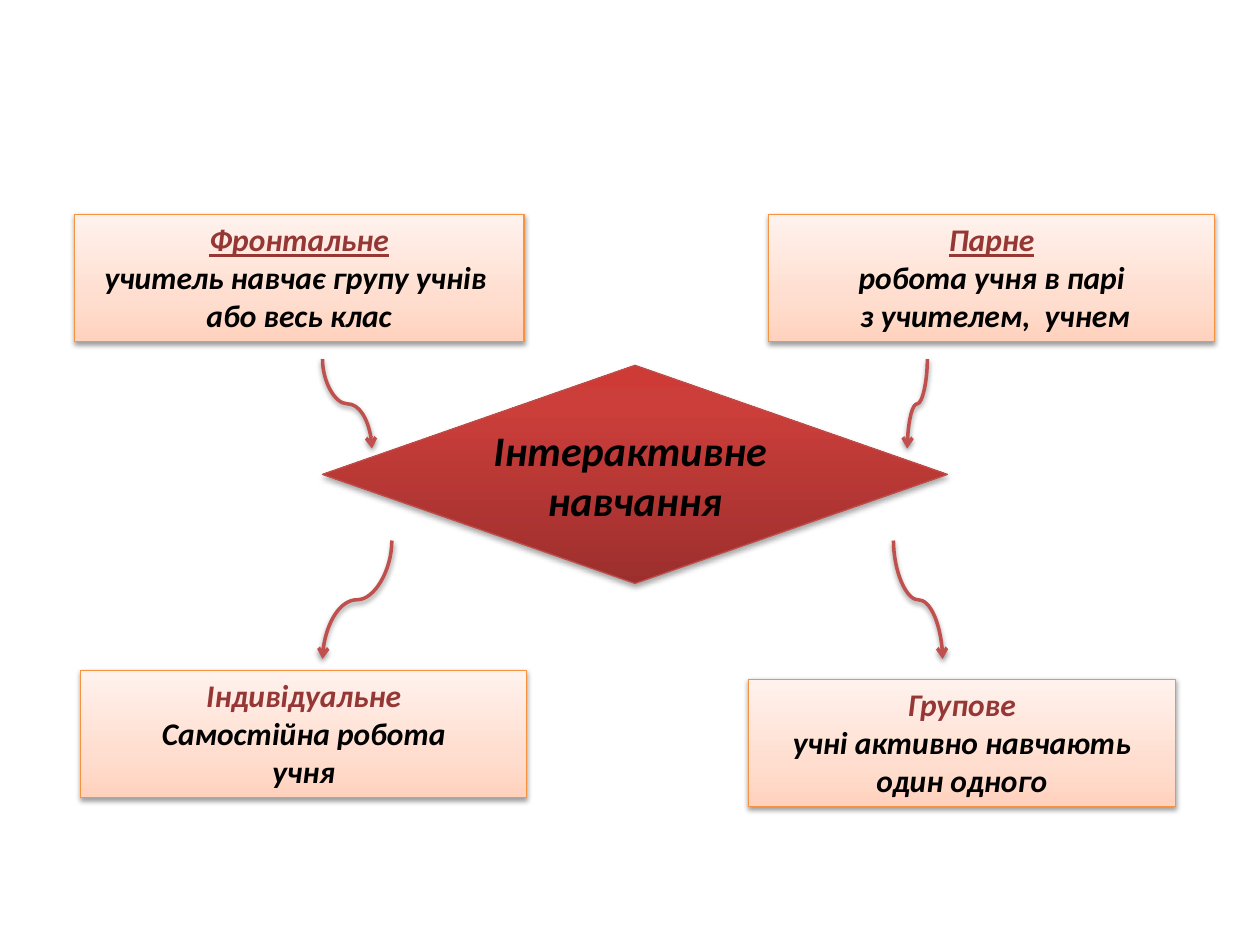
from lxml import etree
from pptx import Presentation
from pptx.dml.color import RGBColor
from pptx.enum.shapes import MSO_CONNECTOR, MSO_SHAPE
from pptx.enum.text import MSO_ANCHOR, MSO_AUTO_SIZE, PP_ALIGN
from pptx.oxml.ns import qn
from pptx.util import Pt

CURVE = MSO_CONNECTOR.CURVE
RECT, DIAMOND = MSO_SHAPE.RECTANGLE, MSO_SHAPE.DIAMOND
TOP, MIDDLE = MSO_ANCHOR.TOP, MSO_ANCHOR.MIDDLE
CENTER = PP_ALIGN.CENTER
FIT_SHAPE, FIT_NONE = MSO_AUTO_SIZE.SHAPE_TO_FIT_TEXT, MSO_AUTO_SIZE.NONE

COLORS = {
    "text": "000000", "heading": "953735", "arrow": "C0504D",
    "box_line": "F69240", "diamond_line": "BF4C48", "shadow": "000000",
}
BOX_STOPS = [(0, "FFD2BD"), (35, "FFDED0"), (100, "FFF2ED")]
DIAMOND_STOPS = [(0, "9C2F2D"), (80, "CB3E3A"), (100, "CE3B37")]


def add_shadow(sp, dist, alpha):
    effects = etree.SubElement(sp._element.spPr, qn("a:effectLst"))
    shadow = etree.SubElement(effects, qn("a:outerShdw"), blurRad=str(Pt(3.1)),
                              dist=str(Pt(dist)), dir="5400000", rotWithShape="0")
    color = etree.SubElement(shadow, qn("a:srgbClr"), val=COLORS["shadow"])
    etree.SubElement(color, qn("a:alpha"), val=str(alpha * 1000))


def add_block(kind, frame, stops, line, dist, alpha, size, anchor, fit, lines):
    sp = s.shapes.add_shape(kind, *[Pt(v) for v in frame])
    sp.fill.gradient()
    sp.fill.gradient_angle = 90
    gs_list = sp._element.spPr.find(".//" + qn("a:gsLst"))
    for gs in list(gs_list):
        gs_list.remove(gs)
    for pos, color in stops:
        gs = etree.SubElement(gs_list, qn("a:gs"), pos=str(pos * 1000))
        etree.SubElement(gs, qn("a:srgbClr"), val=color)
    sp.line.color.rgb = RGBColor.from_string(COLORS[line])
    sp.line.width = Pt(0.75)
    add_shadow(sp, dist, alpha)

    tf = sp.text_frame
    tf.word_wrap = True
    tf.auto_size = fit
    tf.vertical_anchor = anchor
    for i, (text, color, underline) in enumerate(lines):
        p = tf.paragraphs[0] if i == 0 else tf.add_paragraph()
        p.alignment = CENTER
        for j, part in enumerate(text.split("\n")):
            if j:
                p.add_line_break()
            r = p.add_run()
            r.text = part
            r.font.name = "Calibri"
            r.font.size = Pt(size)
            r.font.bold = r.font.italic = True
            r.font.underline = underline
            r.font.color.rgb = RGBColor.from_string(COLORS[color])


prs = Presentation()
prs.slide_width, prs.slide_height = Pt(720), Pt(540)
s = prs.slides.add_slide(prs.slide_layouts[6])

# Central topic
add_block(DIAMOND, (184.3, 208.8, 357.1, 124.6), DIAMOND_STOPS, "diamond_line",
          1.8, 35, 24, MIDDLE, FIT_NONE,
          [("Інтерактивне ", "text", False), ("навчання", "text", False)])

# Four forms of teaching: left, top, width, underlined heading, heading, body
BOXES = [
    (42.5, 122.4, 257, True, "Фронтальне", ["учитель навчає групу учнів \nабо весь клас"]),
    (439.2, 122.4, 255, True, "Парне", ["робота учня в парі", " з учителем,  учнем"]),
    (46.1, 383, 255, False, "Індивідуальне", ["Самостійна робота", "учня"]),
    (427.7, 388.1, 244, False, "Групове", ["учні активно навчають", "один одного"]),
]
for left, top, width, underline, heading, body in BOXES:
    lines = [(heading, "heading", underline)] + [(t, "text", False) for t in body]
    add_block(RECT, (left, top, width, 72.7), BOX_STOPS, "box_line",
              1.6, 38, 18, TOP, FIT_SHAPE, lines)

# Curved arrows that leave and arrive vertically: x1, y1, x2, y2
ARROWS = [
    (184.3, 205.2, 212.6, 256.3),
    (529.9, 205.2, 518.4, 256.3),
    (223.9, 308.9, 184.3, 376.6),
    (510.5, 308.9, 538.6, 376.6),
]
for x1, y1, x2, y2 in ARROWS:
    # Lay the curve on its side about its centre, then turn it a quarter
    cx, cy = (x1 + x2) / 2, (y1 + y2) / 2
    rightward = x2 > x1
    half_w = (y2 - y1) / 2 * (-1 if rightward else 1)
    half_h = abs(x2 - x1) / 2
    c = s.shapes.add_connector(CURVE, Pt(cx - half_w), Pt(cy - half_h),
                               Pt(cx + half_w), Pt(cy + half_h))
    c._element.spPr.find(qn("a:xfrm")).set("rot", "16200000" if rightward else "5400000")
    c.line.color.rgb = RGBColor.from_string(COLORS["arrow"])
    c.line.width = Pt(2)
    etree.SubElement(c.line._get_or_add_ln(), qn("a:tailEnd"), type="arrow")
    add_shadow(c, 1.6, 38)

prs.save("out.pptx")
